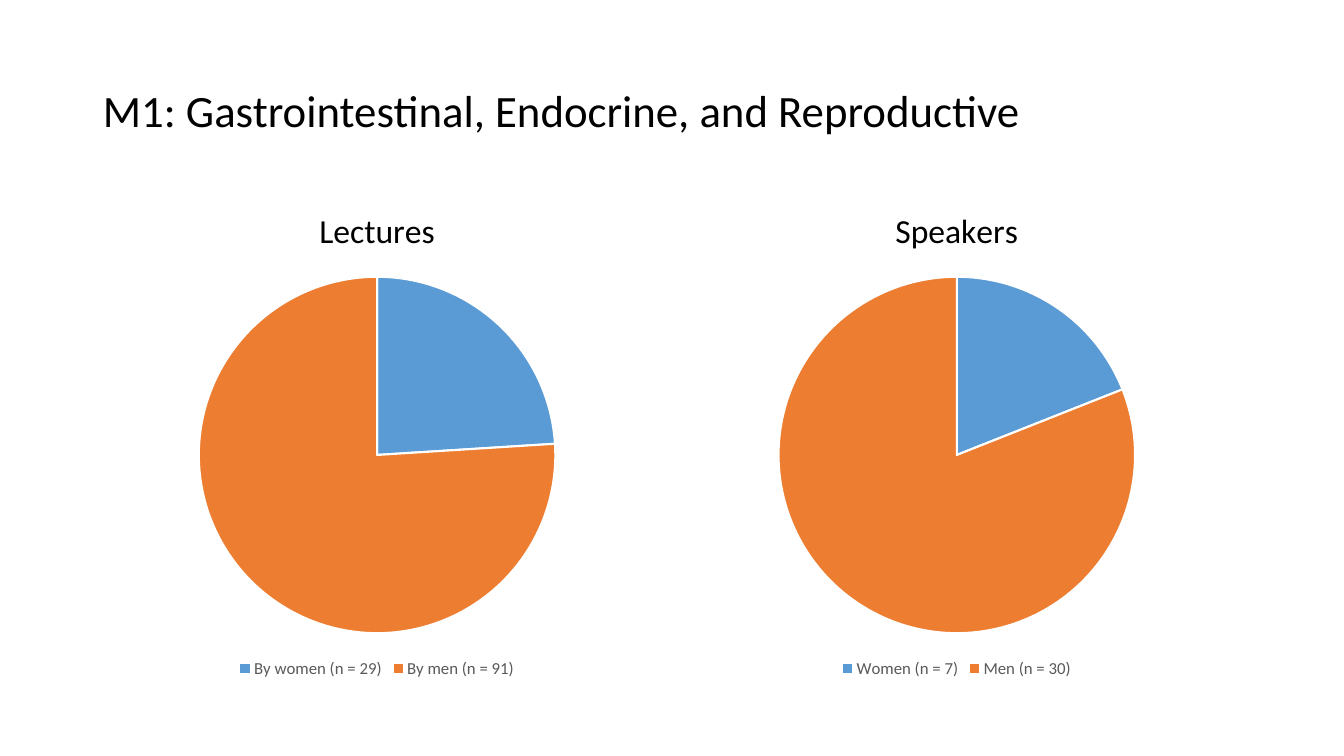
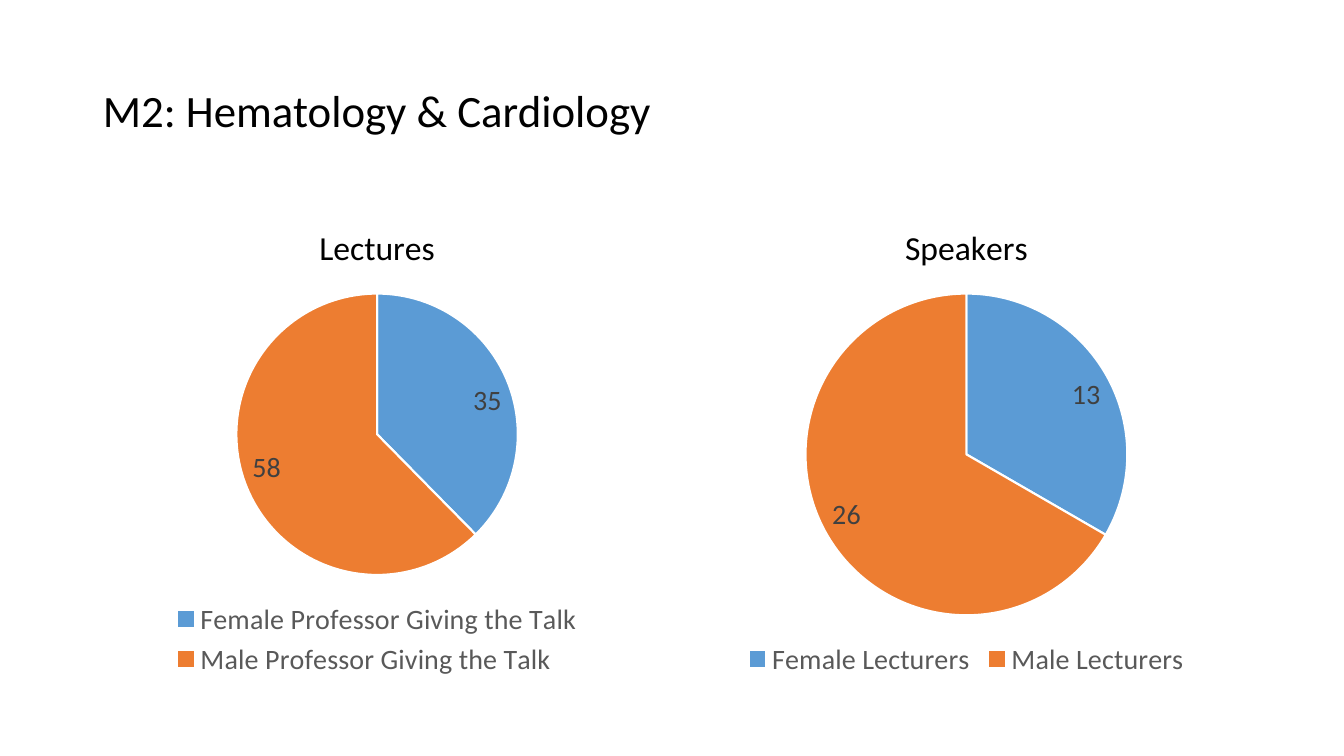
from dataclasses import dataclass

from pptx import Presentation
from pptx.chart.data import CategoryChartData
from pptx.dml.color import RGBColor
from pptx.enum.chart import XL_CHART_TYPE as ChartType
from pptx.enum.chart import XL_LABEL_POSITION as LabelPosition
from pptx.enum.chart import XL_LEGEND_POSITION as LegendPosition
from pptx.enum.text import MSO_ANCHOR as Anchor
from pptx.enum.text import MSO_AUTO_SIZE as AutoSize
from pptx.enum.text import PP_ALIGN as Align
from pptx.util import Inches, Pt

BLACK = RGBColor(0x00, 0x00, 0x00)
WHITE = RGBColor(0xFF, 0xFF, 0xFF)
LEGEND_GRAY = RGBColor(0x59, 0x59, 0x59)
LABEL_GRAY = RGBColor(0x40, 0x40, 0x40)
WOMEN_BLUE = RGBColor(0x5B, 0x9B, 0xD5)
MEN_ORANGE = RGBColor(0xED, 0x7D, 0x31)

FONT = "Calibri"
TITLE_ONLY_LAYOUT = 5
LEFT, RIGHT, CHART_BOTTOM = 0.92, 12.42, 6.77
LECTURES_WIDTH = 5.64


@dataclass(frozen=True)
class Pie:
    title: str
    series: str
    left: float
    width: float
    categories: tuple[str, str]
    values: tuple[int, int]


@dataclass(frozen=True)
class PieSlide:
    title: str
    chart_top: float
    legend_size: int
    show_values: bool
    pies: tuple[Pie, Pie]


def lectures(series: str, categories: tuple[str, str], values: tuple[int, int]) -> Pie:
    return Pie("Lectures", series, LEFT, LECTURES_WIDTH, categories, values)


def speakers(series: str, left: float, categories: tuple[str, str],
             values: tuple[int, int]) -> Pie:
    return Pie("Speakers", series, left, RIGHT - left, categories, values)


SLIDES = (
    PieSlide("M1: Gastrointestinal, Endocrine, and Reproductive", 1.85, 12, False, (
        lectures("Lectures", ("By women (n = 29)", "By men (n = 91)"), (24, 76)),
        speakers("Speakers", LEFT + LECTURES_WIDTH,
                 ("Women (n = 7)", "Men (n = 30)"), (19, 81)),
    )),
    PieSlide("M2: Hematology & Cardiology", 2.02, 20, True, (
        lectures("Series 1", ("Female Professor Giving the Talk",
                              "Male Professor Giving the Talk"), (35, 58)),
        speakers("Series 1", 6.75, ("Female Lecturers", "Male Lecturers"), (13, 26)),
    )),
)


def style_font(font, size: int, color: RGBColor) -> None:
    font.name = FONT
    font.size = Pt(size)
    font.bold = False
    font.color.rgb = color


def set_title(slide, text: str) -> None:
    title = slide.shapes.title
    title.left, title.top = Inches(LEFT), Inches(0.4)
    title.width, title.height = Inches(RIGHT - LEFT), Inches(1.45)
    frame = title.text_frame
    frame.text = text
    frame.auto_size = AutoSize.NONE
    frame.vertical_anchor = Anchor.MIDDLE
    paragraph = frame.paragraphs[0]
    paragraph.alignment = Align.LEFT
    paragraph.line_spacing = 0.9
    style_font(paragraph.font, 32, BLACK)


def add_pie(slide, pie: Pie, layout: PieSlide) -> None:
    data = CategoryChartData()
    data.categories = pie.categories
    data.add_series(pie.series, pie.values)
    chart = slide.shapes.add_chart(
        ChartType.PIE, Inches(pie.left), Inches(layout.chart_top),
        Inches(pie.width), Inches(CHART_BOTTOM - layout.chart_top), data).chart
    style_font(chart.font, 10, BLACK)

    title_frame = chart.chart_title.text_frame
    title_frame.text = pie.title
    style_font(title_frame.paragraphs[0].font, 24, BLACK)
    chart.chart_title.include_in_layout = False

    chart.has_legend = True
    chart.legend.position = LegendPosition.BOTTOM
    chart.legend.include_in_layout = False
    style_font(chart.legend.font, layout.legend_size, LEGEND_GRAY)

    plot = chart.plots[0]
    plot.vary_by_categories = True
    for index, color in enumerate((WOMEN_BLUE, MEN_ORANGE)):
        slice_format = plot.series[0].points[index].format
        slice_format.fill.solid()
        slice_format.fill.fore_color.rgb = color
        slice_format.line.color.rgb = WHITE
        slice_format.line.width = Pt(1.5)

    plot.has_data_labels = layout.show_values
    if layout.show_values:
        labels = plot.data_labels
        labels.show_value = True
        labels.show_percentage = False
        labels.position = LabelPosition.INSIDE_END
        style_font(labels.font, 20, LABEL_GRAY)


def main() -> None:
    presentation = Presentation()
    presentation.slide_width = Inches(13.33)
    presentation.slide_height = Inches(7.5)
    for content in SLIDES:
        slide = presentation.slides.add_slide(
            presentation.slide_layouts[TITLE_ONLY_LAYOUT])
        set_title(slide, content.title)
        for pie in content.pies:
            add_pie(slide, pie, content)
    presentation.save("out.pptx")


if __name__ == "__main__":
    main()
